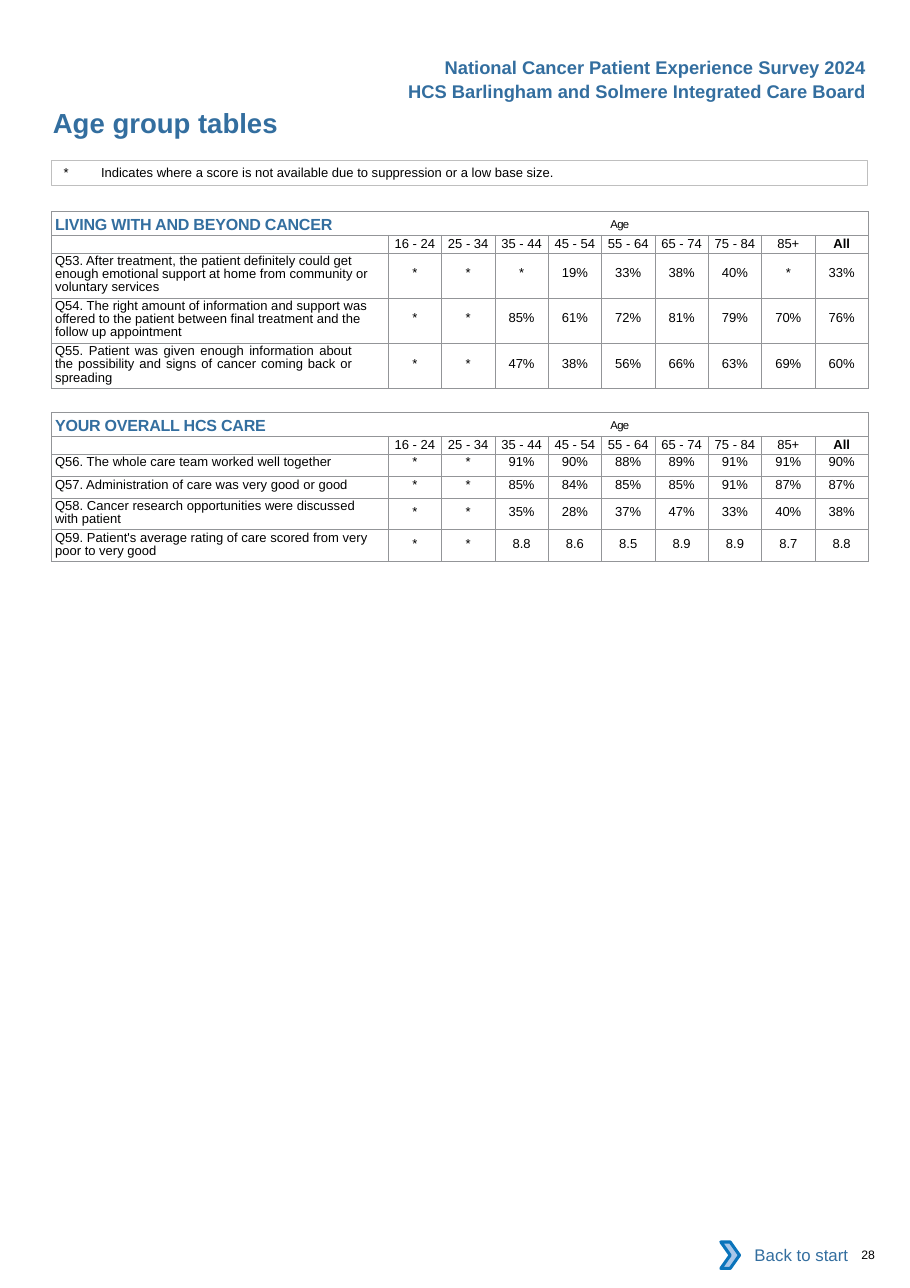
from dataclasses import dataclass

from lxml.etree import SubElement
from pptx import Presentation
from pptx.dml.color import RGBColor
from pptx.enum.shapes import MSO_SHAPE
from pptx.enum.text import MSO_ANCHOR, PP_ALIGN
from pptx.oxml.ns import qn
from pptx.util import Cm, Pt

BLUE, BLACK, WHITE = "336E9F", "000000", "FFFFFF"
GRID, NOTE_LINE = "939598", "BFBFBF"
ARROW_FILL, ARROW_LINE = "A8C7E9", "0A74BB"
LEFT, WIDTH = 1.19, 18.82
QUESTION_WIDTH, SCORE_WIDTH = 7.76, 1.23
TITLE_ROW, AGES_ROW = 0.54, 0.41
ROW_HEIGHTS = {1: 0.51, 2: 0.73, 3: 1.04}  # by lines of question text
SCORE_MARGINS = {1: 0.03, 2: 0.15, 3: 0.3}
AGES = ["16 - 24", "25 - 34", "35 - 44", "45 - 54", "55 - 64", "65 - 74", "75 - 84", "85+", "All"]


@dataclass
class Question:
    text: str
    lines: int
    scores: str
    justified: bool = False


@dataclass
class Section:
    title: str
    top: float
    questions: list[Question]


@dataclass
class Label:
    text: str
    left: float
    top: float
    width: float
    height: float
    size: float
    color: str = BLUE
    bold: bool = True
    align: PP_ALIGN = PP_ALIGN.LEFT


LABELS = [
    Label("28", 19.86, 28.76, 1.1, 0.33, 8, BLACK, False),
    Label("Age group tables", 1.22, 2.45, 10.4, 0.76, 18),
    Label("HCS Barlingham and Solmere Integrated Care Board", 8, 1.85, 11.97, 0.51, 12,
          align=PP_ALIGN.RIGHT),
    Label("National Cancer Patient Experience Survey 2024", 8, 1.29, 11.97, 0.51, 12,
          align=PP_ALIGN.RIGHT),
]

SECTIONS = [
    Section("LIVING WITH AND BEYOND CANCER", 4.88, [
        Question("Q53. After treatment, the patient definitely could get enough emotional support "
                 "at home from community or voluntary services", 3,
                 "* * * 19% 33% 38% 40% * 33%"),
        Question("Q54. The right amount of information and support was offered to the patient "
                 "between final treatment and the follow up appointment", 3,
                 "* * 85% 61% 72% 81% 79% 70% 76%"),
        Question("Q55. Patient was given enough information about the possibility and signs of "
                 "cancer coming back or spreading", 3,
                 "* * 47% 38% 56% 66% 63% 69% 60%", justified=True),
    ]),
    Section("YOUR OVERALL HCS CARE", 9.51, [
        Question("Q56. The whole care team worked well together", 1,
                 "* * 91% 90% 88% 89% 91% 91% 90%"),
        Question("Q57. Administration of care was very good or good", 1,
                 "* * 85% 84% 85% 85% 91% 87% 87%"),
        Question("Q58. Cancer research opportunities were discussed with patient", 2,
                 "* * 35% 28% 37% 47% 33% 40% 38%"),
        Question("Q59. Patient's average rating of care scored from very poor to very good", 2,
                 "* * 8.8 8.6 8.5 8.9 8.9 8.7 8.8"),
    ]),
]


def rgb(color: str) -> RGBColor:
    return RGBColor.from_string(color)


def set_font(font, size: float, color: str = BLACK, bold: bool = False) -> None:
    font.name, font.size, font.bold = "Arial", Pt(size), bold
    font.color.rgb = rgb(color)


def set_margins(target, left: float = 0, top: float = 0, right: float = 0, bottom: float = 0) -> None:
    target.margin_left, target.margin_top = Cm(left), Cm(top)
    target.margin_right, target.margin_bottom = Cm(right), Cm(bottom)


def indent_with_tab(paragraph, indent: float, tab: float) -> None:
    properties = paragraph._p.get_or_add_pPr()
    properties.set("marL", str(Cm(indent)))
    tabs = SubElement(properties, qn("a:tabLst"))
    SubElement(tabs, qn("a:tab"), pos=str(Cm(tab)), algn="l")


def style_cell(cell) -> None:
    properties = cell._tc.get_or_add_tcPr()
    for side in ("a:lnL", "a:lnR", "a:lnT", "a:lnB"):
        line = SubElement(properties, qn(side), w=str(Pt(0.5)))
        SubElement(SubElement(line, qn("a:solidFill")), qn("a:srgbClr"), val=GRID)
    cell.fill.background()
    set_margins(cell)


def write_cell(cell, text: str, align: PP_ALIGN = PP_ALIGN.CENTER, bold: bool = False):
    paragraph = cell.text_frame.paragraphs[0]
    paragraph.alignment = align
    set_font(paragraph.font, 8.5, bold=bold)
    paragraph.add_run().text = text
    return paragraph


def write_section_title(cell, title: str) -> None:
    cell.vertical_anchor = MSO_ANCHOR.MIDDLE
    paragraph = cell.text_frame.paragraphs[0]
    indent_with_tab(paragraph, 0.08, 12.8)
    for text, size, color, bold, spacing in ((title + "\t", 10.5, BLUE, True, -10),
                                             ("Age", 12.8, BLACK, False, -40)):
        run = paragraph.add_run()
        run.text = text
        set_font(run.font, size, color, bold)
        run._r.get_or_add_rPr().set("spc", str(spacing))
    run._r.get_or_add_rPr().set("baseline", "10000")


def write_ages(cells: list) -> None:
    SubElement(cells[0].text_frame.paragraphs[0]._p, qn("a:endParaRPr"), sz="850")
    for cell, age in zip(cells[1:], AGES):
        cell.vertical_anchor = MSO_ANCHOR.MIDDLE
        write_cell(cell, age, bold=age == "All").line_spacing = Pt(9.9)


def write_question(cells: list, question: Question) -> None:
    set_margins(cells[0], 0.08, 0.03 if question.lines == 1 else 0.05,
                0.83 if question.justified else 0.35)
    align = PP_ALIGN.JUSTIFY if question.justified else PP_ALIGN.LEFT
    paragraph = write_cell(cells[0], question.text, align)
    if question.lines > 1:
        paragraph.line_spacing = Pt(8.6)
    for cell, score in zip(cells[1:], question.scores.split()):
        cell.margin_top = Cm(SCORE_MARGINS[question.lines])
        write_cell(cell, score)


def add_section(slide, section: Section) -> None:
    heights = [TITLE_ROW, AGES_ROW] + [ROW_HEIGHTS[question.lines] for question in section.questions]
    table = slide.shapes.add_table(len(heights), len(AGES) + 1, Cm(LEFT), Cm(section.top),
                                   Cm(WIDTH), Cm(sum(heights))).table
    table.first_row = table.horz_banding = False
    for column, width in zip(table.columns, [QUESTION_WIDTH] + [SCORE_WIDTH] * len(AGES)):
        column.width = Cm(width)
    for row, height in zip(table.rows, heights):
        row.height = Cm(height)
    for cell in table.iter_cells():
        style_cell(cell)
    title_row, ages_row, *question_rows = [list(row.cells) for row in table.rows]
    title_row[0].merge(title_row[-1])
    write_section_title(title_row[0], section.title)
    write_ages(ages_row)
    for cells, question in zip(question_rows, section.questions):
        write_question(cells, question)


def add_label(slide, label: Label) -> None:
    box = slide.shapes.add_textbox(Cm(label.left), Cm(label.top), Cm(label.width), Cm(label.height))
    frame = box.text_frame
    frame.word_wrap = True
    set_margins(frame)
    paragraph = frame.paragraphs[0]
    paragraph.text, paragraph.alignment = label.text, label.align
    set_font(paragraph.font, label.size, label.color, label.bold)


def add_plain_shape(shapes, kind: MSO_SHAPE, left: float, top: float, width: float, height: float,
                    fill: str = "", line: str = "", line_width: float = 0.5):
    shape = shapes.add_shape(kind, Cm(left), Cm(top), Cm(width), Cm(height))
    shape.shadow.inherit = False
    if fill:
        shape.fill.solid()
        shape.fill.fore_color.rgb = rgb(fill)
    else:
        shape.fill.background()
    if line:
        shape.line.color.rgb = rgb(line)
        shape.line.width = Pt(line_width)
    else:
        shape.line.fill.background()
    return shape


def add_note(slide) -> None:
    frame = add_plain_shape(slide.shapes, MSO_SHAPE.RECTANGLE, LEFT, 3.7, WIDTH, 0.57,
                            line=NOTE_LINE).text_frame
    set_margins(frame, top=0.1, bottom=0.1)
    frame.vertical_anchor = MSO_ANCHOR.TOP
    paragraph = frame.paragraphs[0]
    paragraph.text = "*\tIndicates where a score is not available due to suppression or a low base size."
    paragraph.alignment = PP_ALIGN.LEFT
    indent_with_tab(paragraph, 0.28, 0.86)
    set_font(paragraph.font, 8.5)


def add_back_button(slide) -> None:
    shapes = slide.shapes.add_group_shape().shapes
    frame = add_plain_shape(shapes, MSO_SHAPE.RECTANGLE, 16.81, 28.4, 3, 1.07, WHITE).text_frame
    frame.vertical_anchor = MSO_ANCHOR.MIDDLE
    paragraph = frame.paragraphs[0]
    paragraph.text, paragraph.alignment = "Back to start", PP_ALIGN.RIGHT
    set_font(paragraph.font, 11, BLUE)
    add_plain_shape(shapes, MSO_SHAPE.CHEVRON, 16.62, 28.63, 0.43, 0.61, ARROW_FILL, ARROW_LINE, 2)


def main() -> None:
    presentation = Presentation()
    presentation.slide_width, presentation.slide_height = Cm(20.98), Cm(29.69)
    slide = presentation.slides.add_slide(presentation.slide_layouts[6])
    for label in LABELS:
        add_label(slide, label)
    for section in SECTIONS:
        add_section(slide, section)
    add_note(slide)
    add_back_button(slide)
    presentation.save("out.pptx")


if __name__ == "__main__":
    main()
